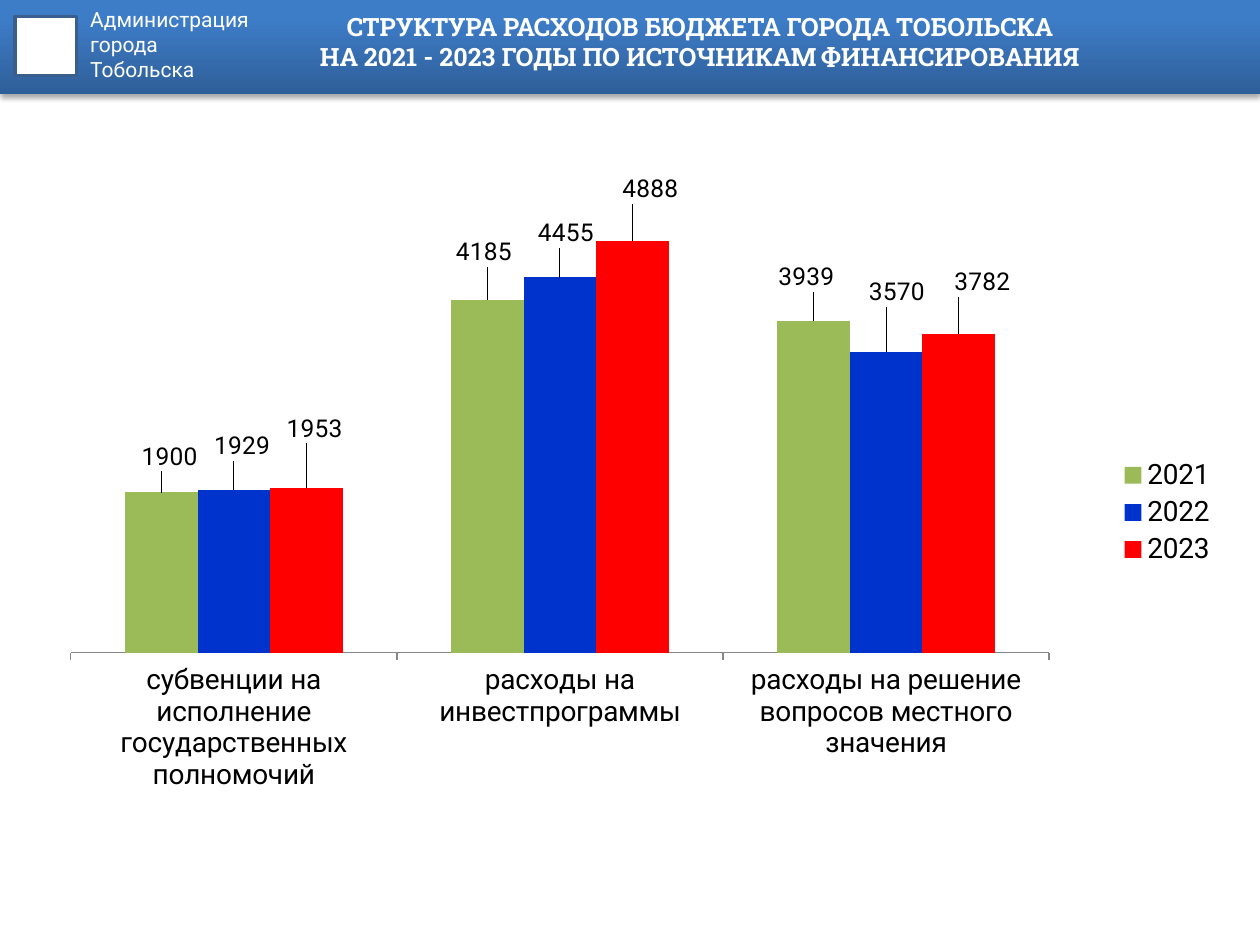
from lxml import etree
from pptx import Presentation
from pptx.chart.data import CategoryChartData
from pptx.dml.color import RGBColor
from pptx.enum.chart import (XL_CHART_TYPE as ChartType, XL_LABEL_POSITION as LabelPosition,
                             XL_LEGEND_POSITION as LegendPosition, XL_TICK_MARK as TickMark)
from pptx.enum.shapes import MSO_SHAPE as Shape
from pptx.enum.text import MSO_ANCHOR as Anchor, MSO_AUTO_SIZE as AutoSize, PP_ALIGN as Align
from pptx.oxml import parse_xml
from pptx.oxml.ns import nsdecls, qn
from pptx.util import Cm, Pt

# Content
TITLE = ["СТРУКТУРА РАСХОДОВ БЮДЖЕТА ГОРОДА ТОБОЛЬСКА",
         "НА 2021 - 2023 ГОДЫ ПО ИСТОЧНИКАМ ФИНАНСИРОВАНИЯ"]
OWNER = ["Администрация", "города", "Тобольска"]
CATEGORIES = ["субвенции на исполнение государственных полномочий",
              "расходы на инвестпрограммы",
              "расходы на решение вопросов местного значения"]

WHITE = RGBColor(0xFF, 0xFF, 0xFF)
BLACK = RGBColor(0, 0, 0)
GREY = RGBColor(0x86, 0x86, 0x86)
BAND_DARK = RGBColor(0x2F, 0x5F, 0x99)
BAND_LIGHT = RGBColor(0x3D, 0x7C, 0xC7)
EMBLEM_LINE = RGBColor(0x3A, 0x5F, 0x8C)
GREEN = RGBColor(0x9B, 0xBB, 0x59)
BLUE = RGBColor(0x00, 0x33, 0xCC)
RED = RGBColor(0xFF, 0, 0)

# Year, colour, values, label shifts (share of chart width and height)
SERIES = [
    ("2021", GREEN, (1900, 4185, 3939), ((0.007, -0.02), (-0.003, -0.035), (-0.006, -0.03))),
    ("2022", BLUE, (1929, 4455, 3570), ((0.007, -0.03), (0.005, -0.03), (0.009, -0.05))),
    ("2023", RED, (1953, 4888, 3782), ((0.007, -0.05), (0.015, -0.04), (0.02, -0.04))),
]
PLOT = {"x": 0.035, "y": 0.036, "w": 0.815, "h": 0.642}


def set_font(font, name, size, color, bold=False):
    font.name, font.size, font.bold = name, Pt(size), bold
    font.color.rgb = color


def manual_layout(values, inner=False):
    """Make a c:layout element from a dict of x, y, w, h."""
    layout = etree.Element(qn("c:layout"))
    manual = etree.SubElement(layout, qn("c:manualLayout"))
    settings = [("layoutTarget", "inner"), ("xMode", "edge"), ("yMode", "edge")] if inner else []
    for tag, value in settings + list(values.items()):
        etree.SubElement(manual, qn(f"c:{tag}")).set("val", str(value))
    return layout


presentation = Presentation()
presentation.slide_width, presentation.slide_height = Cm(25.4), Cm(19.05)
slide = presentation.slides.add_slide(presentation.slide_layouts[5])
shapes = slide.shapes

# Header band
band = shapes.add_shape(Shape.RECTANGLE, 0, 0, presentation.slide_width, Cm(1.9))
band.line.fill.background()
band.fill.gradient()
band.fill.gradient_angle = 90
for stop, color, position in zip(band.fill.gradient_stops, (BAND_DARK, BAND_LIGHT), (0, 0.8)):
    stop.color.rgb, stop.position = color, position
band.element.spPr.append(parse_xml(
    f'<a:effectLst {nsdecls("a")}><a:outerShdw blurRad="40000" dist="23000" dir="5400000" '
    'rotWithShape="0"><a:srgbClr val="000000"><a:alpha val="35000"/></a:srgbClr>'
    '</a:outerShdw></a:effectLst>'))

# Emblem frame
emblem = shapes.add_shape(Shape.RECTANGLE, Cm(0.3), Cm(0.33), Cm(1.24), Cm(1.19))
emblem.shadow.inherit = False
emblem.fill.solid()
emblem.fill.fore_color.rgb = WHITE
emblem.line.color.rgb = EMBLEM_LINE
emblem.line.width = Pt(2)

# Owner name
owner = shapes.add_textbox(Cm(1.57), 0, Cm(5.94), Cm(2.31)).text_frame
owner.word_wrap = True
owner.text = "\n".join(OWNER)
for paragraph in owner.paragraphs:
    set_font(paragraph.font, "Roboto", 12, WHITE)

# Title, brought in front of the band
title = shapes.title
title.left, title.top, title.width, title.height = Cm(3.71), 0, Cm(20.8), Cm(1.68)
title.element.getparent().append(title.element)
frame = title.text_frame
frame.auto_size = AutoSize.NONE
frame.margin_top = frame.margin_bottom = 0
frame.vertical_anchor = Anchor.MIDDLE
frame.text = "\v".join(TITLE)
frame.paragraphs[0].alignment = Align.CENTER
for run in frame.paragraphs[0].runs:
    set_font(run.font, "Roboto Slab", 14.4, WHITE, bold=True)

# Chart
data = CategoryChartData()
data.categories = CATEGORIES
for year, _, values, _ in SERIES:
    data.add_series(year, values)
chart = shapes.add_chart(ChartType.COLUMN_CLUSTERED, Cm(0.58), Cm(2.39),
                         Cm(24.2), Cm(15.88), data).chart
set_font(chart.font, "Roboto", 10, BLACK)
chart.has_title = False
chart.has_legend = True
chart.legend.position = LegendPosition.RIGHT
chart.legend.include_in_layout = False
set_font(chart.legend.font, "Roboto", 16, BLACK)

# Axes
value_axis = chart.value_axis
value_axis.minimum_scale, value_axis.maximum_scale = 0, 6000
value_axis.has_major_gridlines = False
value_axis.visible = False
category_axis = chart.category_axis
category_axis.major_tick_mark = TickMark.OUTSIDE
category_axis.format.line.color.rgb = GREY
set_font(category_axis.tick_labels.font, "Roboto", 16, BLACK)

# Plot area
plot = chart.plots[0]
plot.gap_width, plot.overlap = 150, 0
plot.vary_by_categories = False
plot_area = chart.element.find(".//" + qn("c:plotArea"))
for old_layout in plot_area.findall(qn("c:layout")):
    plot_area.remove(old_layout)
plot_area.insert(0, manual_layout(PLOT, inner=True))

# Columns and shifted value labels
for series, (_, color, _, shifts) in zip(plot.series, SERIES):
    series.format.fill.solid()
    series.format.fill.fore_color.rgb = color
    for index in range(len(shifts)):
        label = series.points[index].data_label
        set_font(label.font, "Roboto", 14, BLACK)
        label.position = LabelPosition.OUTSIDE_END
    for label_xml, (x, y) in zip(series.data_labels.element.findall(qn("c:dLbl"))
                                 if hasattr(series.data_labels, "element")
                                 else chart.element.findall(".//" + qn("c:dLbl"))[-len(shifts):],
                                 shifts):
        label_xml.insert(1, manual_layout({"x": x, "y": y}))

presentation.save("out.pptx")
